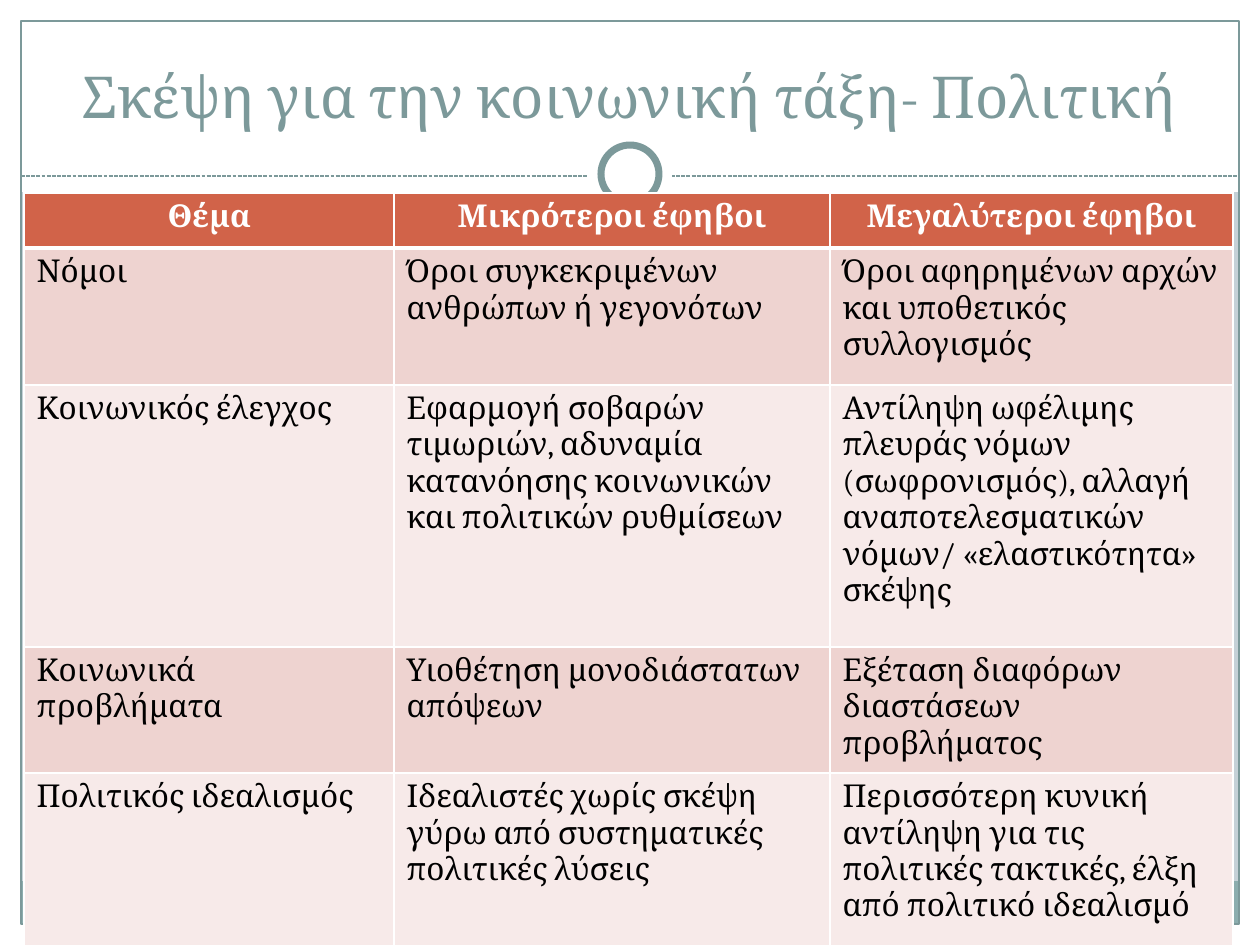
from pptx import Presentation
from pptx.dml.color import RGBColor
from pptx.enum.dml import MSO_LINE
from pptx.enum.shapes import MSO_CONNECTOR, MSO_SHAPE
from pptx.enum.text import MSO_ANCHOR, PP_ALIGN
from pptx.oxml.ns import qn
from pptx.util import Emu, Pt
from lxml.etree import SubElement

SCALE = 914400 / 126
WHITE = RGBColor(0xFF, 0xFF, 0xFF)
BLACK = RGBColor(0, 0, 0)
BACK = RGBColor(0xC5, 0xD1, 0xD7)
TEAL = RGBColor(0x7C, 0x99, 0x9A)
BAND = RGBColor(0x8C, 0xAD, 0xAE)
RUST = RGBColor(0xD1, 0x63, 0x49)
ROSE = RGBColor(0xEE, 0xD3, 0xD0)
PALE = RGBColor(0xF7, 0xEA, 0xE9)

ROWS = [
    ("Θέμα", "Μικρότεροι έφηβοι", "Μεγαλύτεροι έφηβοι"),
    ("Νόμοι", "Όροι συγκεκριμένων ανθρώπων ή γεγονότων",
     "Όροι αφηρημένων αρχών και υποθετικός συλλογισμός"),
    ("Κοινωνικός έλεγχος",
     "Εφαρμογή σοβαρών τιμωριών, αδυναμία κατανόησης κοινωνικών "
     "και πολιτικών ρυθμίσεων",
     "Αντίληψη ωφέλιμης πλευράς νόμων (σωφρονισμός), αλλαγή "
     "αναποτελεσματικών νόμων/ «ελαστικότητα» σκέψης"),
    ("Κοινωνικά προβλήματα", "Υιοθέτηση μονοδιάστατων απόψεων",
     "Εξέταση διαφόρων διαστάσεων προβλήματος"),
    ("Πολιτικός ιδεαλισμός",
     "Ιδεαλιστές χωρίς σκέψη γύρω από συστηματικές πολιτικές λύσεις",
     "Περισσότερη κυνική αντίληψη για τις πολιτικές τακτικές, "
     "έλξη από πολιτικό ιδεαλισμό"),
]


def px(*nums):
    return [Emu(round(n * SCALE)) for n in nums]


class Deck:
    font = "Cambria"

    def __init__(self, wide, high):
        self.prs = Presentation()
        self.prs.slide_width, self.prs.slide_height = px(wide, high)
        self.slide = self.prs.slides.add_slide(self.prs.slide_layouts[6])

    def back(self, color):
        fill = self.slide.background.fill
        fill.solid()
        fill.fore_color.rgb = color

    def shape(self, box, fill=None, line=None, width=0.75,
              kind=MSO_SHAPE.RECTANGLE):
        shape = self.slide.shapes.add_shape(kind, *px(*box))
        shape.shadow.inherit = False
        if fill is None:
            shape.fill.background()
        else:
            shape.fill.solid()
            shape.fill.fore_color.rgb = fill
        if line is None:
            shape.line.fill.background()
        else:
            shape.line.color.rgb = line
            shape.line.width = Pt(width)

    def dash(self, ends, color):
        line = self.slide.shapes.add_connector(MSO_CONNECTOR.STRAIGHT, *px(*ends))
        line.line.color.rgb = color
        line.line.width = Pt(0.75)
        line.line.dash_style = MSO_LINE.SQUARE_DOT
        SubElement(line._element.spPr, qn("a:effectLst"))

    def label(self, frame, text, size, color, bold=False, align=PP_ALIGN.LEFT):
        frame.word_wrap = True
        para = frame.paragraphs[0]
        para.text = text
        para.alignment = align
        font = para.runs[0].font
        font.name, font.size, font.bold = self.font, Pt(size), bold
        font.color.rgb = color

    def title(self, box, text):
        frame = self.slide.shapes.add_textbox(*px(*box)).text_frame
        frame.vertical_anchor = MSO_ANCHOR.BOTTOM
        self.label(frame, text, 33, TEAL, align=PP_ALIGN.CENTER)

    def border(self, cell, last):
        props = cell._tc.get_or_add_tcPr()
        for side, width in zip("LRTB", (1, 1, 1, last)):
            line = SubElement(props, qn(f"a:ln{side}"), w=str(Pt(width)))
            fill = SubElement(line, qn("a:solidFill"))
            SubElement(fill, qn("a:srgbClr"), val=str(WHITE))

    def table(self, left, top, cols, highs, rows):
        box = px(left, top, sum(cols), sum(highs))
        table = self.slide.shapes.add_table(len(rows), len(cols), *box).table
        table.horz_banding = False
        for col, wide in zip(table.columns, px(*cols)):
            col.width = wide
        for row, high in zip(table.rows, px(*highs)):
            row.height = high
        for r, texts in enumerate(rows):
            head = r == 0
            for c, text in enumerate(texts):
                cell = table.cell(r, c)
                self.border(cell, 3 if head else 1)
                cell.fill.solid()
                cell.fill.fore_color.rgb = RUST if head else ROSE if r % 2 else PALE
                self.label(cell.text_frame, text, 18, WHITE if head else BLACK,
                           head, PP_ALIGN.CENTER if head else PP_ALIGN.LEFT)


def main():
    deck = Deck(1260, 945)
    deck.back(BACK)

    # White margins and top panel
    for box in ((0, 924, 1260, 21), (0, 0, 1260, 192),
                (0, 0, 21, 945), (1239, 0, 21, 945)):
        deck.shape(box, WHITE)

    # Bottom band, frame and divider with its ring
    deck.shape((21, 881, 1217, 43), BAND)
    deck.shape((21, 21, 1218, 903), line=TEAL)
    deck.dash((21, 176, 1239, 176), TEAL)
    deck.shape((588, 132, 84, 84), WHITE, kind=MSO_SHAPE.OVAL)
    deck.shape((601, 145, 58, 58), WHITE, TEAL, 4, MSO_SHAPE.OVAL)

    # Title and table
    deck.title((42, 31, 1176, 105), "Σκέψη για την κοινωνική τάξη- Πολιτική")
    deck.table(24, 193, (370, 436, 403), (55, 137, 262, 97, 179), ROWS)

    deck.prs.save("out.pptx")


if __name__ == "__main__":
    main()
